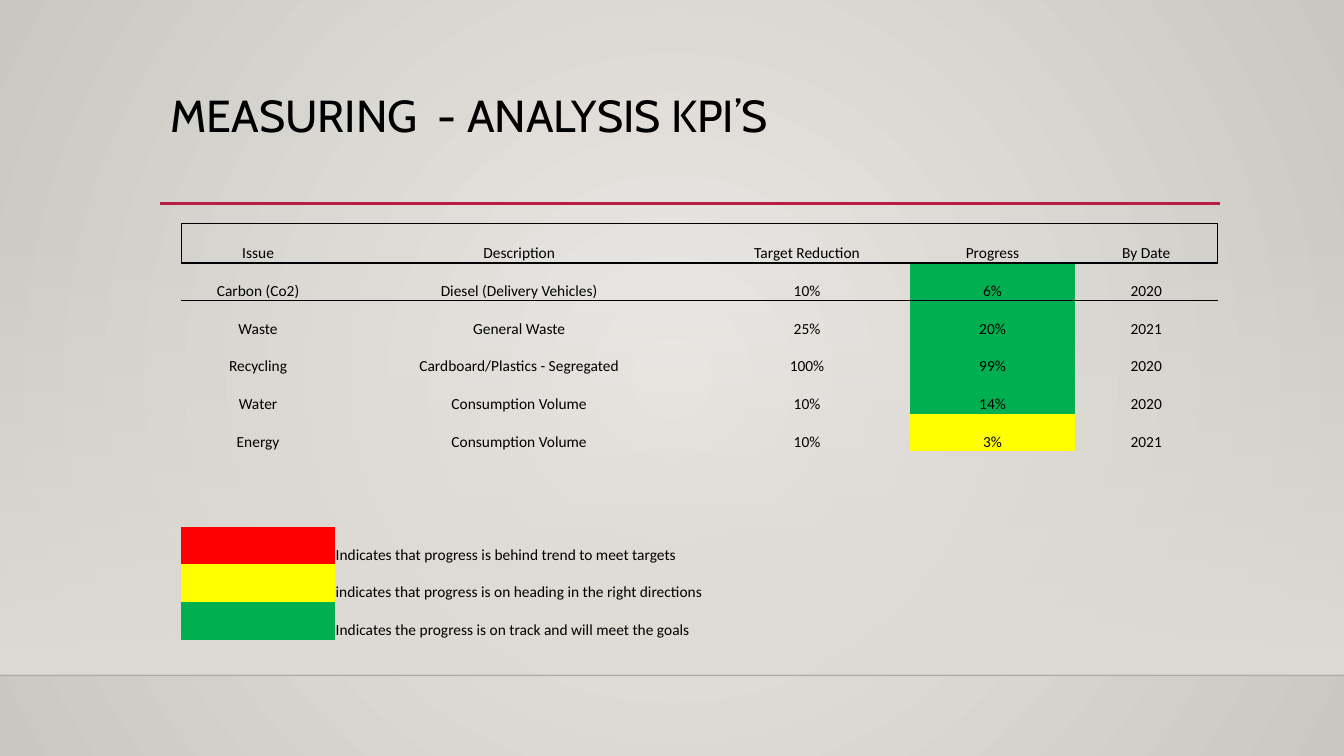
from pptx import Presentation
from pptx.dml.color import RGBColor
from pptx.enum.shapes import MSO_CONNECTOR, MSO_SHAPE
from pptx.enum.text import MSO_ANCHOR, MSO_AUTO_SIZE, PP_ALIGN
from pptx.oxml import parse_xml
from pptx.oxml.ns import nsdecls, qn
from pptx.util import Inches, Pt

STRAIGHT, RECT = MSO_CONNECTOR.STRAIGHT, MSO_SHAPE.RECTANGLE
TOP, BOTTOM = MSO_ANCHOR.TOP, MSO_ANCHOR.BOTTOM
LEFT, CENTER = PP_ALIGN.LEFT, PP_ALIGN.CENTER
NO_AUTOFIT = MSO_AUTO_SIZE.NONE
NO_STYLE = "{2D5ABB26-0587-4C30-8999-92F81FD0307C}"

# Content
TITLE = "MEASURING  - ANALYSIS KPI’S"
RED, YELLOW, GREEN, BLACK = "FF0000", "FFFF00", "00B050", "000000"
HEADER = ["Issue", "Description", "Target Reduction", "Progress", "By Date"]
KPIS = [
    (["Carbon (Co2)", "Diesel (Delivery Vehicles)", "10%", "6%", "2020"], GREEN),
    (["Waste", "General Waste", "25%", "20%", "2021"], GREEN),
    (["Recycling", "Cardboard/Plastics - Segregated", "100%", "99%", "2020"], GREEN),
    (["Water", "Consumption Volume", "10%", "14%", "2020"], GREEN),
    (["Energy", "Consumption Volume", "10%", "3%", "2021"], YELLOW),
]
LEGEND = [
    (RED, "Indicates that progress is behind trend to meet targets"),
    (YELLOW, "indicates that progress is on heading in the right directions"),
    (GREEN, "Indicates the progress is on track and will meet the goals"),
]

# Grid, in inches
WIDTH, HEIGHT = 13.33, 7.5
RULE_LEFT, RULE_RIGHT, RULE_Y = 1.59, 12.1, 2.02
BAND_TOP, FLOOR_Y = 2.21, 6.7
TABLE_LEFT, TABLE_TOP, TABLE_HEIGHT = 1.8, 2.22, 4.13
COLUMNS = [1.52, 3.66, 2.05, 1.63, 1.42]
HEADER_HEIGHT = 0.39
PROGRESS = HEADER.index("Progress")
LEGEND_ROW = 1 + len(KPIS) + 2
ROW_COUNT = LEGEND_ROW + len(LEGEND)
ROW_HEIGHT = (TABLE_HEIGHT - HEADER_HEIGHT) / (ROW_COUNT - 1)


def rgb(color):
    return RGBColor.from_string(color)


def set_alpha(color_element, percent):
    color_element.append(parse_xml(
        f'<a:alpha {nsdecls("a")} val="{percent * 1000}"/>'))


def set_stops(fill, colors):
    fill.gradient()
    for stop, color in zip(fill.gradient_stops, colors):
        stop.color.rgb = rgb(color)


def add_rule(x1, x2, y, color, width):
    line = s.shapes.add_connector(
        STRAIGHT, Inches(x1), Inches(y), Inches(x2), Inches(y))
    line.line.color.rgb = rgb(color)
    line.line.width = Pt(width)
    line._element.spPr.append(parse_xml(f'<a:effectLst {nsdecls("a")}/>'))
    return line


def add_text(tf, text, size, font, align):
    p = tf.paragraphs[0]
    p.alignment = align
    r = p.add_run()
    r.text = text
    r.font.size, r.font.name = Pt(size), font
    r.font.color.rgb = rgb(BLACK)
    return p


def add_borders(cell, sides):
    tcPr = cell._tc.get_or_add_tcPr()
    for side in sides:
        tcPr.append(parse_xml(
            f'<a:ln{side} {nsdecls("a")} w="{Pt(1)}"><a:solidFill>'
            f'<a:srgbClr val="{BLACK}"/></a:solidFill></a:ln{side}>'))


def fill_cell(row, col, text="", align=CENTER, color=None):
    cell = table.cell(row, col)
    cell.vertical_anchor = BOTTOM
    cell.margin_left = cell.margin_right = cell.margin_top = Inches(0.01)
    cell.margin_bottom = 0
    if color:
        cell.fill.solid()
        cell.fill.fore_color.rgb = rgb(color)
    else:
        cell.fill.background()
    if text:
        add_text(cell.text_frame, text, 11, "Calibri", align)


prs = Presentation()
prs.slide_width, prs.slide_height = Inches(WIDTH), Inches(HEIGHT)
s = prs.slides.add_slide(prs.slide_layouts[5])

# Background glow
set_stops(s.background.fill, ["ECEAE7", "CAC7C1"])
glow = s.element.find(".//" + qn("a:gradFill"))
glow.replace(glow.find(qn("a:lin")), parse_xml(
    f'<a:path {nsdecls("a")} path="circle">'
    '<a:fillToRect l="50000" t="50000" r="50000" b="50000"/></a:path>'))

# Band fading in towards the floor line
band = s.shapes.add_shape(RECT, 0, Inches(BAND_TOP), Inches(WIDTH),
                          Inches(FLOOR_Y - BAND_TOP))
band.shadow.inherit = False
band.line.fill.background()
set_stops(band.fill, ["DFDBD5", "DFDBD5"])
band.fill.gradient_angle = 270
for clr, percent in zip(band._element.spPr.iter(qn("a:srgbClr")), [0, 100]):
    set_alpha(clr, percent)

# Floor line and title rule
floor = add_rule(0, WIDTH, FLOOR_Y, "000001", 1)
set_alpha(floor._element.spPr.find(".//" + qn("a:srgbClr")), 20)
add_rule(RULE_LEFT, RULE_RIGHT, RULE_Y, "B71E42", 2.5)

# Title
title = s.shapes.title
title.left, title.top = Inches(RULE_LEFT), Inches(0.88)
title.width, title.height = Inches(10.5), Inches(1.15)
tf = title.text_frame
tf.word_wrap, tf.auto_size, tf.vertical_anchor = True, NO_AUTOFIT, TOP
add_text(tf, TITLE, 32, "Cabin", LEFT).line_spacing = 0.9

# Table frame
frame = s.shapes.add_table(
    ROW_COUNT, len(COLUMNS), Inches(TABLE_LEFT), Inches(TABLE_TOP),
    Inches(sum(COLUMNS)), Inches(TABLE_HEIGHT))
table = frame.table
table.first_row = table.horz_banding = False
frame._element.find(".//" + qn("a:tableStyleId")).text = NO_STYLE
for column, width in zip(table.columns, COLUMNS):
    column.width = Inches(width)
for i, row in enumerate(table.rows):
    row.height = Inches(ROW_HEIGHT if i else HEADER_HEIGHT)

# Box around the header row
last = len(COLUMNS) - 1
for col in range(len(COLUMNS)):
    add_borders(table.cell(0, col),
                {0: "LTB", last: "RTB"}.get(col, "TB"))
    add_borders(table.cell(1, col), "T")

# KPI rows, then the two empty rows
rows = [(HEADER, None)] + KPIS + [([""] * len(COLUMNS), None)] * 2
for row, (texts, status) in enumerate(rows):
    for col, text in enumerate(texts):
        fill_cell(row, col, text, color=status if col == PROGRESS else None)

# Colour legend
for row, (color, meaning) in enumerate(LEGEND, LEGEND_ROW):
    table.cell(row, 1).merge(table.cell(row, last - 1))
    fill_cell(row, 0, color=color)
    fill_cell(row, 1, meaning, LEFT)
    fill_cell(row, last)

prs.save("out.pptx")
